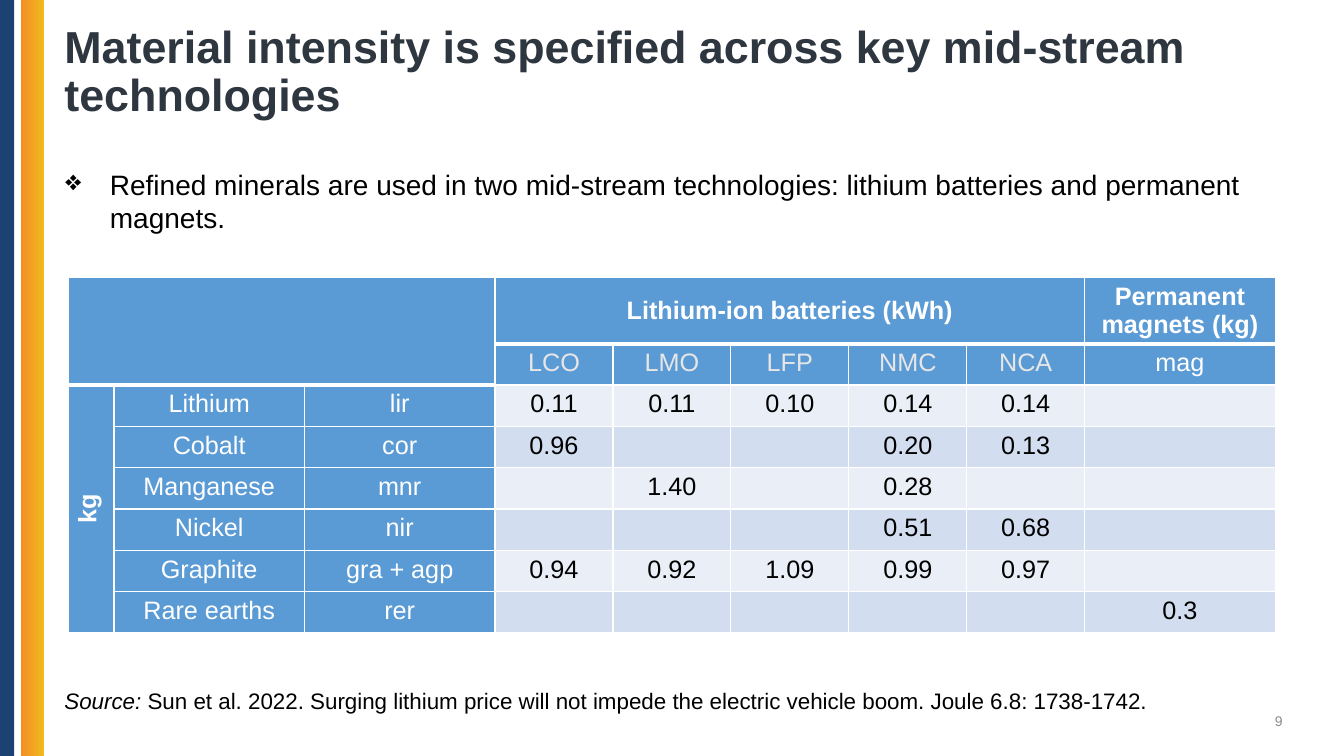
"""Builds the slide on material intensity of mid-stream technologies."""
from lxml import etree
from pptx import Presentation
from pptx import util as u
from pptx.dml.color import RGBColor
from pptx.enum import shapes, text
from pptx.oxml import ns

NAVY = RGBColor(0x1B, 0x42, 0x73)
ORANGE = RGBColor(0xF3, 0x8F, 0x22)
YELLOW = RGBColor(0xF1, 0xBA, 0x20)
SLATE = RGBColor(0x2E, 0x36, 0x40)
GREY = RGBColor(0x8C, 0x8C, 0x8C)
PALE_GREY = RGBColor(0xE7, 0xE6, 0xE6)
BLACK = RGBColor(0, 0, 0)
WHITE = RGBColor(0xFF, 0xFF, 0xFF)
HEADER_BLUE = RGBColor(0x5B, 0x9B, 0xD5)
BANDS = RGBColor(0xEA, 0xEF, 0xF7), RGBColor(0xD2, 0xDE, 0xEF)

COLUMN_WIDTHS = [0.45, 1.89, 1.89] + [1.17] * 5 + [1.89]
ROW_HEIGHT = 0.41
LABEL_COLUMNS = 3
HEADER_ROWS = 2
INTENSITIES = [
    ["", "", "", "Lithium-ion batteries (kWh)", "", "", "", "", "Permanent magnets (kg)"],
    ["", "", "", "LCO", "LMO", "LFP", "NMC", "NCA", "mag"],
    ["kg", "Lithium", "lir", "0.11", "0.11", "0.10", "0.14", "0.14", ""],
    ["", "Cobalt", "cor", "0.96", "", "", "0.20", "0.13", ""],
    ["", "Manganese", "mnr", "", "1.40", "", "0.28", "", ""],
    ["", "Nickel", "nir", "", "", "", "0.51", "0.68", ""],
    ["", "Graphite", "gra + agp", "0.94", "0.92", "1.09", "0.99", "0.97", ""],
    ["", "Rare earths", "rer", "", "", "", "", "", "0.3"],
]
MERGES = [((0, 0), (1, 2)), ((0, 3), (0, 7)), ((2, 0), (7, 0))]


class SlideBuilder:
    """Holds the typeface and the current slide."""

    def __init__(self, slide, typeface="Arial"):
        self.slide = slide
        self.typeface = typeface

    def style(self, font, size, color, bold=False):
        font.name, font.size, font.bold = self.typeface, u.Pt(size), bold
        font.color.rgb = color

    def bar(self, left, width, *colors):
        stripe = self.slide.shapes.add_shape(
            shapes.MSO_SHAPE.RECTANGLE, u.Inches(left), 0, u.Inches(width), u.Inches(7.5))
        stripe.shadow.inherit = False
        stripe.line.fill.background()
        if len(colors) == 1:
            stripe.fill.solid()
            stripe.fill.fore_color.rgb = colors[0]
        else:
            stripe.fill.gradient()
            stripe.fill.gradient_angle = 0
            for stop, color in zip(stripe.fill.gradient_stops, colors):
                stop.color.rgb = color

    def words(self, box, parts, size, color, bold=False, anchor=text.MSO_ANCHOR.TOP):
        frame = self.slide.shapes.add_textbox(*map(u.Inches, box)).text_frame
        frame.word_wrap = True
        frame.vertical_anchor = anchor
        paragraph = frame.paragraphs[0]
        for part in parts:
            run = paragraph.add_run()
            run.text = part
            self.style(run.font, size, color, bold)
        return frame

    def bullet(self, box, sentence, size, color, symbol="❖", indent=0.44):
        frame = self.words(box, [sentence], size, color)
        frame.margin_left = frame.margin_right = 0
        properties = frame.paragraphs[0]._p.get_or_add_pPr()
        properties.set("marL", str(u.Inches(indent)))
        properties.set("indent", str(-u.Inches(indent)))
        etree.SubElement(properties, ns.qn("a:buChar")).set("char", symbol)

    def borders(self, cell, bottom_width):
        properties = cell._tc.get_or_add_tcPr()
        for side, width in zip("LRTB", (1, 1, 1, bottom_width)):
            line = etree.SubElement(properties, ns.qn("a:ln" + side), w=str(u.Pt(width)))
            fill = etree.SubElement(line, ns.qn("a:solidFill"))
            etree.SubElement(fill, ns.qn("a:srgbClr"), val=str(WHITE))

    def cell(self, cell, row, column, label):
        in_header = row < HEADER_ROWS
        in_labels = column < LABEL_COLUMNS
        thick = row == 0 or (row == 1 and in_labels)
        self.borders(cell, 3 if thick else 1)
        cell.fill.solid()
        cell.fill.fore_color.rgb = HEADER_BLUE if in_header or in_labels else BANDS[row % 2]
        if row == 0:
            cell.vertical_anchor = text.MSO_ANCHOR.MIDDLE
        if not label:
            return
        if label == "kg":
            cell._tc.get_or_add_tcPr().set("vert", "vert270")
        if row == 1 and label != "mag":
            color = PALE_GREY
        else:
            color = WHITE if in_header or in_labels else BLACK
        cell.text_frame.text = label
        paragraph = cell.text_frame.paragraphs[0]
        paragraph.alignment = text.PP_ALIGN.CENTER
        self.style(paragraph.runs[0].font, 18, color, row == 0 or column == 0)

    def table(self, left, top, rows, widths, row_height, merges):
        grid = self.slide.shapes.add_table(
            len(rows), len(widths), u.Inches(left), u.Inches(top),
            u.Inches(sum(widths)), u.Inches(row_height * len(rows))).table
        grid.first_row = grid.horz_banding = False
        for column, width in zip(grid.columns, widths):
            column.width = u.Inches(width)
        for row, labels in enumerate(rows):
            grid.rows[row].height = u.Inches(row_height)
            for column, label in enumerate(labels):
                self.cell(grid.cell(row, column), row, column, label)
        for first, last in merges:
            grid.cell(*first).merge(grid.cell(*last))


def main():
    deck = Presentation()
    deck.slide_width, deck.slide_height = u.Inches(13.33), u.Inches(7.5)
    page = SlideBuilder(deck.slides.add_slide(deck.slide_layouts[6]))
    middle = text.MSO_ANCHOR.MIDDLE

    page.bar(-0.03, 0.17, NAVY)
    page.bar(0.21, 0.23, ORANGE, YELLOW)
    page.table(0.68, 2.75, INTENSITIES, COLUMN_WIDTHS, ROW_HEIGHT, MERGES)

    title = page.words(
        (0.54, 0.14, 12.42, 1.17),
        ["Material intensity is specified across key mid-stream technologies"],
        32, SLATE, bold=True, anchor=middle)
    title.paragraphs[0].line_spacing = 0.9

    page_number = page.words((9.82, 6.95, 3, 0.4), ["9"], 10, GREY, anchor=middle)
    page_number.paragraphs[0].alignment = text.PP_ALIGN.RIGHT

    page.bullet(
        (0.65, 1.61, 12.04, 1.04),
        "Refined minerals are used in two mid-stream technologies: "
        "lithium batteries and permanent magnets.", 20, BLACK)

    source = page.words(
        (0.54, 6.77, 11.69, 0.37),
        ["Source: ", "Sun et al. 2022. Surging lithium price will not impede the "
                     "electric vehicle boom. Joule 6.8: 1738-1742."], 16, BLACK)
    source.paragraphs[0].runs[0].font.italic = True

    deck.save("out.pptx")


if __name__ == "__main__":
    main()
